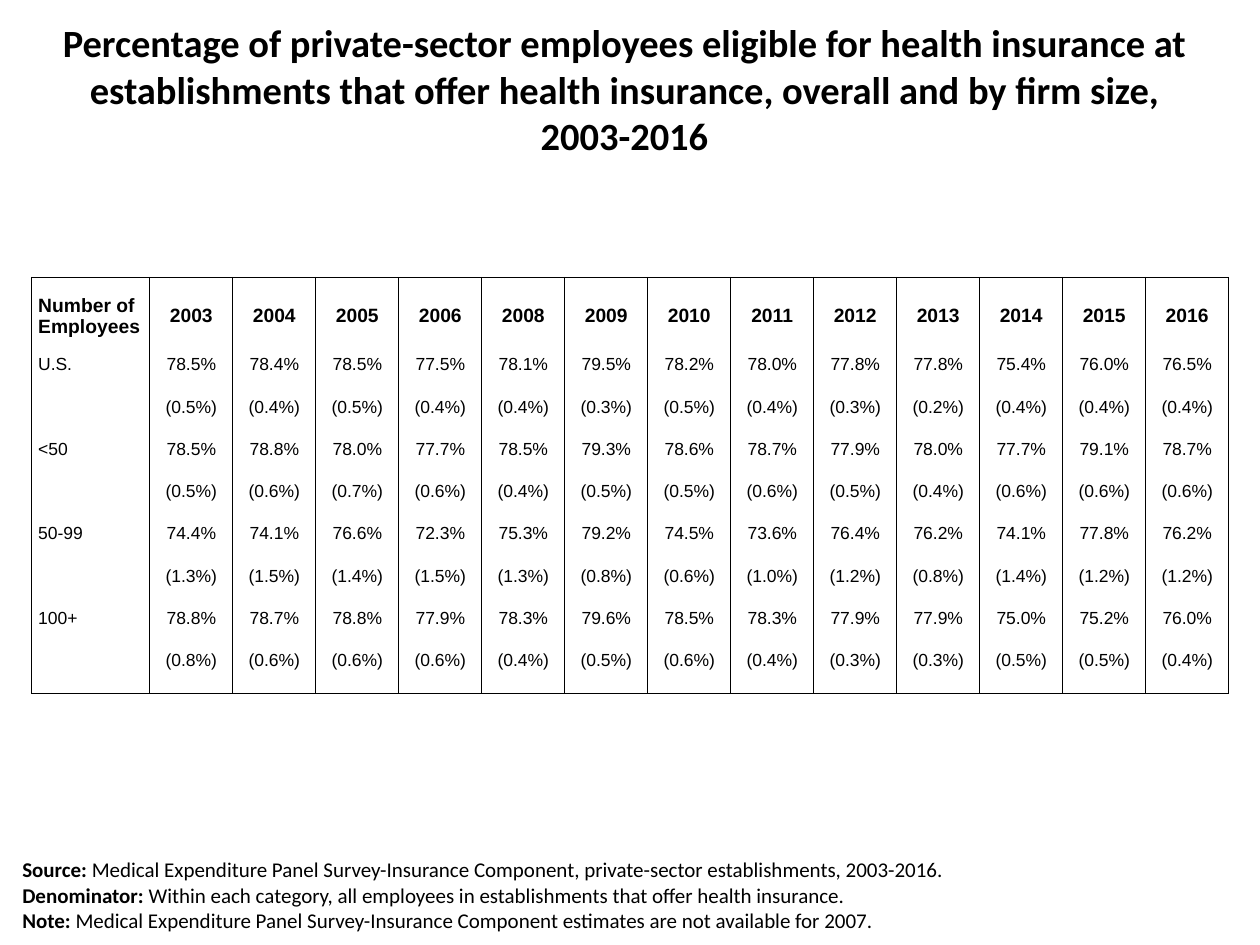
import lxml.etree
import pptx
import pptx.dml.color
import pptx.enum.text
import pptx.oxml.ns
import pptx.util
from pptx.util import Cm

BLACK = pptx.dml.color.RGBColor(0x00, 0x00, 0x00)
CENTER = pptx.enum.text.PP_ALIGN.CENTER
LEFT = pptx.enum.text.PP_ALIGN.LEFT
MIDDLE = pptx.enum.text.MSO_ANCHOR.MIDDLE
TOP = pptx.enum.text.MSO_ANCHOR.TOP
NO_STYLE = "{2D5ABB26-0587-4C30-8999-92F81FD0307C}"

TITLE = ("Percentage of private-sector employees eligible for health insurance at "
         "establishments that offer health insurance, overall and by firm size, 2003-2016")
YEARS = [year for year in range(2003, 2017) if year != 2007]
ESTIMATES = {
    "U.S.": (
        "78.5 78.4 78.5 77.5 78.1 79.5 78.2 78.0 77.8 77.8 75.4 76.0 76.5",
        "0.5 0.4 0.5 0.4 0.4 0.3 0.5 0.4 0.3 0.2 0.4 0.4 0.4"),
    "<50": (
        "78.5 78.8 78.0 77.7 78.5 79.3 78.6 78.7 77.9 78.0 77.7 79.1 78.7",
        "0.5 0.6 0.7 0.6 0.4 0.5 0.5 0.6 0.5 0.4 0.6 0.6 0.6"),
    "50-99": (
        "74.4 74.1 76.6 72.3 75.3 79.2 74.5 73.6 76.4 76.2 74.1 77.8 76.2",
        "1.3 1.5 1.4 1.5 1.3 0.8 0.6 1.0 1.2 0.8 1.4 1.2 1.2"),
    "100+": (
        "78.8 78.7 78.8 77.9 78.3 79.6 78.5 78.3 77.9 77.9 75.0 75.2 76.0",
        "0.8 0.6 0.6 0.6 0.4 0.5 0.6 0.4 0.3 0.3 0.5 0.5 0.4"),
}
NOTES = [
    ("Source: ", "Medical Expenditure Panel Survey-Insurance Component, "
                 "private-sector establishments, 2003-2016."),
    ("Denominator: ", "Within each category, all employees in establishments "
                      "that offer health insurance."),
    ("Note: ", "Medical Expenditure Panel Survey-Insurance Component estimates "
               "are not available for 2007."),
]


def style_font(font, name, size, bold=None):
    """Set typeface, size, weight and the black text colour."""
    font.name = name
    font.size = pptx.util.Pt(size)
    font.bold = bold
    font.color.rgb = BLACK


def add_title(slide, left, top, width, height):
    """Place the centred slide title in the given box."""
    frame = slide.shapes.add_textbox(left, top, width, height).text_frame
    frame.word_wrap = True
    frame.vertical_anchor = MIDDLE
    paragraph = frame.paragraphs[0]
    paragraph.text = TITLE
    paragraph.alignment = CENTER
    style_font(paragraph.font, "Calibri", 22, True)


def add_border(cell, side):
    """Draw a thin black line on one side of a cell."""
    properties = cell._tc.get_or_add_tcPr()
    line = lxml.etree.SubElement(properties, pptx.oxml.ns.qn(f"a:ln{side}"),
                                 w=str(pptx.util.Pt(0.5)))
    fill = lxml.etree.SubElement(line, pptx.oxml.ns.qn("a:solidFill"))
    lxml.etree.SubElement(fill, pptx.oxml.ns.qn("a:srgbClr"), val=str(BLACK))


def fill_cell(cell, text, is_header, is_label, sides):
    """Write one table cell and draw its borders."""
    cell.margin_left = cell.margin_right = cell.margin_top = cell.margin_bottom = 0
    cell.vertical_anchor = MIDDLE if is_header else TOP
    for side in sides:
        add_border(cell, side)
    cell.fill.background()
    paragraph = cell.text_frame.paragraphs[0]
    paragraph.text = text
    paragraph.alignment = LEFT if is_label else CENTER
    if is_label:
        paragraph._p.get_or_add_pPr().set("marL", str(Cm(0.13)))
    style_font(paragraph.font, "Arial", 11 if is_header else 10, is_header)


def table_rows():
    """Return the table text: header, then an estimate and an error row per size."""
    rows = [["Number of Employees", *map(str, YEARS)]]
    for label, (estimates, errors) in ESTIMATES.items():
        rows.append([label, *(f"{value}%" for value in estimates.split())])
        rows.append(["", *(f"({value}%)" for value in errors.split())])
    return rows


def add_estimates_table(slide, left, top, width, height):
    """Place the table of estimates and standard errors in the given box."""
    rows = table_rows()
    last_row = len(rows) - 1
    table = slide.shapes.add_table(len(rows), len(rows[0]), left, top, width, height).table
    table.first_row = table.horz_banding = False
    table._tbl.tblPr.find(pptx.oxml.ns.qn("a:tableStyleId")).text = NO_STYLE
    label_width, header_height = Cm(2.38), Cm(1.57)
    for index, column in enumerate(table.columns):
        column.width = (width - label_width) // len(YEARS) if index else label_width
    for index, row in enumerate(table.rows):
        row.height = (height - header_height) // last_row if index else header_height
    for row_index, row in enumerate(rows):
        sides = "LR" + "T" * (row_index == 0) + "B" * (row_index == last_row)
        for column_index, text in enumerate(row):
            fill_cell(table.cell(row_index, column_index), text,
                      row_index == 0, column_index == 0, sides)


def add_notes(slide, left, top, width, height):
    """Place the source lines with bold lead words in the given box."""
    frame = slide.shapes.add_textbox(left, top, width, height).text_frame
    frame.word_wrap = True
    for index, (lead, text) in enumerate(NOTES):
        paragraph = frame.add_paragraph() if index else frame.paragraphs[0]
        style_font(paragraph.font, "Calibri", 12)
        for words, bold in ((lead, True), (text, False)):
            run = paragraph.add_run()
            run.text = words
            run.font.bold = bold


def main():
    """Build the slide and save the presentation."""
    presentation = pptx.Presentation()
    presentation.slide_width, presentation.slide_height = Cm(25.4), Cm(19.05)
    slide = presentation.slides.add_slide(presentation.slide_layouts[6])
    add_title(slide, Cm(0.84), Cm(0.2), Cm(23.5), Cm(3.18))
    add_estimates_table(slide, Cm(0.64), Cm(5.59), Cm(24.13), Cm(8.38))
    add_notes(slide, Cm(0.2), Cm(17.15), Cm(19.25), Cm(1.7))
    presentation.save("out.pptx")


if __name__ == "__main__":
    main()
